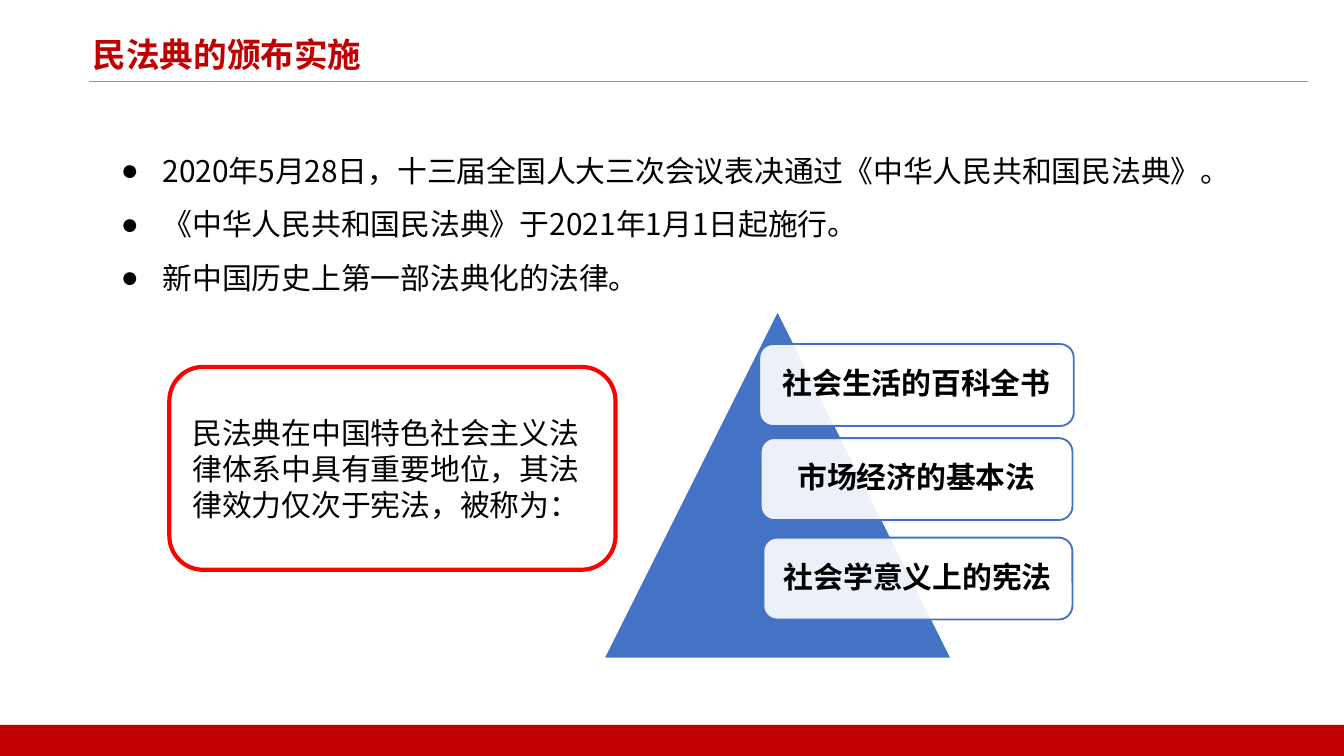
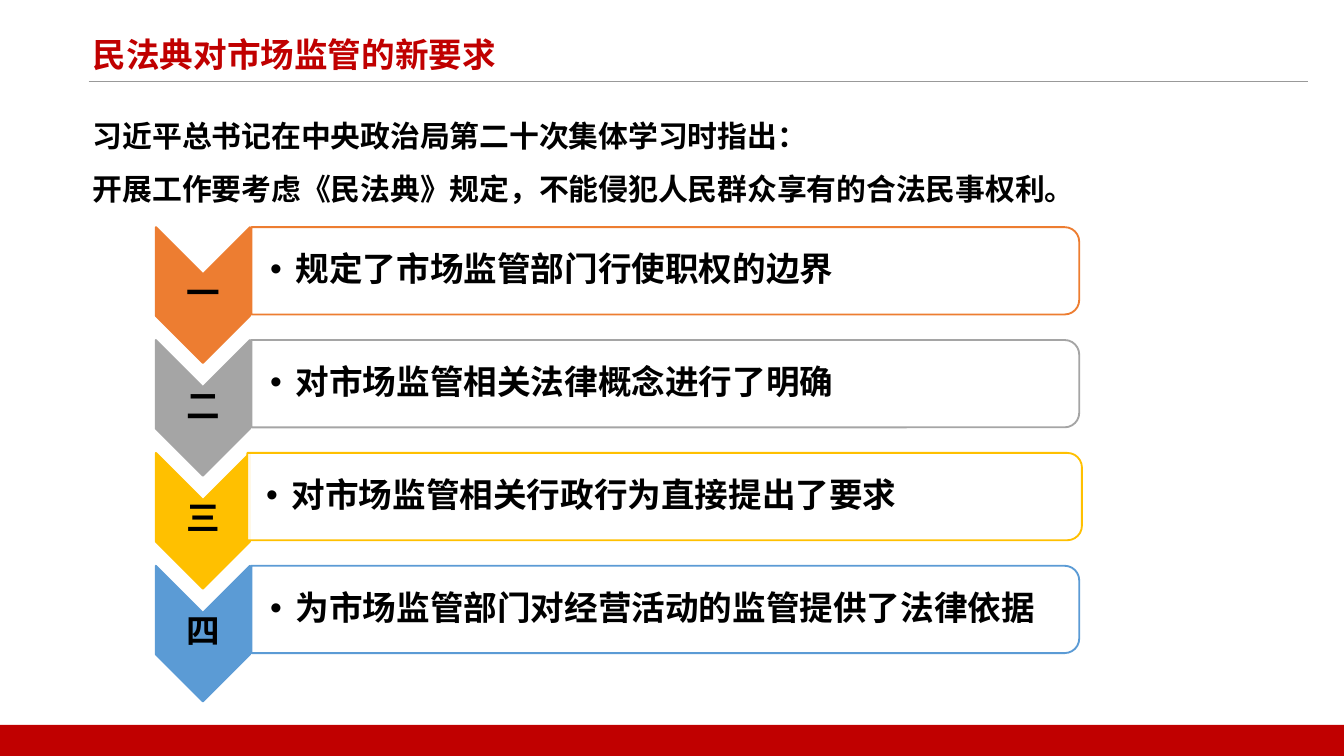
from dataclasses import dataclass

from lxml import etree
from pptx import Presentation
from pptx import util as u
from pptx.dml.color import RGBColor
from pptx.enum import shapes, text
from pptx.enum.lang import MSO_LANGUAGE_ID
from pptx.oxml.ns import qn

SHAPE = shapes.MSO_SHAPE
ALIGN = text.PP_ALIGN
ANCHOR = text.MSO_ANCHOR
PAGE_WIDTH = 10
PAGE_HEIGHT = PAGE_WIDTH * 9 / 16
BAND_HEIGHT = 0.23


@dataclass(frozen=True)
class Theme:
    font: str = "Noto Sans CJK SC"
    heading: int = 18
    body: int = 16
    ink: str = "000000"
    paper: str = "FFFFFF"
    brand: str = "C00000"
    alert: str = "FF0000"
    rule: str = "999999"
    blue: str = "4472C4"
    steps: tuple = ("ED7D31", "A5A5A5", "FFC000", "5B9BD5")


THEME = Theme()


def put_text(frame, lines, size=THEME.body, color=THEME.ink, bold=False,
             align=ALIGN.LEFT, anchor=ANCHOR.TOP, spacing=1.0,
             bullet=None, indent=0, insets=(0.1, 0.05, 0.1, 0.05)):
    """Fill a text frame, one paragraph a line; insets run left, top, right, bottom."""
    frame.word_wrap = True
    frame.auto_size = text.MSO_AUTO_SIZE.NONE
    frame.vertical_anchor = anchor
    (frame.margin_left, frame.margin_top,
     frame.margin_right, frame.margin_bottom) = map(u.Inches, insets)
    for number, line in enumerate(lines):
        paragraph = frame.add_paragraph() if number else frame.paragraphs[0]
        paragraph.alignment = align
        paragraph.line_spacing = spacing
        paragraph.space_before = u.Pt(0)
        props = paragraph._p.get_or_add_pPr()
        props.set("marL", str(u.Inches(indent)))
        props.set("indent", str(-u.Inches(indent)))
        if bullet:
            etree.SubElement(props, qn("a:buFont"), typeface="Arial")
            etree.SubElement(props, qn("a:buChar"), char=bullet)
        else:
            etree.SubElement(props, qn("a:buNone"))
        run = paragraph.add_run()
        run.text = line
        run.font.size = u.Pt(size)
        run.font.bold = bold
        run.font.color.rgb = RGBColor.from_string(color)
        run.font.name = THEME.font
        run.font.language_id = MSO_LANGUAGE_ID.SIMPLIFIED_CHINESE
        etree.SubElement(run._r.get_or_add_rPr(), qn("a:ea"), typeface=THEME.font)


class Deck:
    def __init__(self, theme):
        self.theme = theme
        self.prs = Presentation()
        self.prs.slide_width = u.Inches(PAGE_WIDTH)
        self.prs.slide_height = u.Inches(PAGE_HEIGHT)
        self.slide = None

    def new_slide(self, title):
        """Start a slide with its title, rule and bottom band."""
        self.slide = self.prs.slides.add_slide(self.prs.slide_layouts[1])
        self.placeholder(0, (0.59, 0.2, 9.09, 0.35), [title], size=self.theme.heading,
                         color=self.theme.brand, bold=True)
        self.rule(0.66, 9.73, 0.61)
        self.shape(SHAPE.RECTANGLE,
                   (0, PAGE_HEIGHT - BAND_HEIGHT, PAGE_WIDTH, BAND_HEIGHT),
                   fill=self.theme.brand)

    def placeholder(self, index, box, lines, **style):
        holder = self.slide.placeholders[index]
        holder.left, holder.top, holder.width, holder.height = map(u.Inches, box)
        put_text(holder.text_frame, lines, **style)

    def rule(self, left, right, y):
        line = self.slide.shapes.add_connector(
            shapes.MSO_CONNECTOR.STRAIGHT, *map(u.Inches, (left, y, right, y)))
        line.line.color.rgb = RGBColor.from_string(self.theme.rule)
        line.line.width = u.Pt(0.5)
        etree.SubElement(line._element.spPr, qn("a:effectLst"))

    def shape(self, kind, box, fill=None, opacity=100, line=None, weight=1, turned=False):
        """Add a shape that covers box, even when turned by 90 degrees."""
        left, top, width, height = box
        if turned:
            left, top = left + (width - height) / 2, top + (height - width) / 2
            width, height = height, width
        shape = self.slide.shapes.add_shape(
            kind, *map(u.Inches, (left, top, width, height)))
        shape.rotation = 90 if turned else 0
        shape.shadow.inherit = False
        if fill:
            shape.fill.solid()
            shape.fill.fore_color.rgb = RGBColor.from_string(fill)
            if opacity < 100:
                color = shape.fill._xPr.find(".//" + qn("a:srgbClr"))
                etree.SubElement(color, qn("a:alpha"), val=str(opacity * 1000))
        else:
            shape.fill.background()
        if line:
            shape.line.color.rgb = RGBColor.from_string(line)
            shape.line.width = u.Pt(weight)
        else:
            shape.line.fill.background()
        return shape

    def label(self, box, line, **style):
        frame = self.slide.shapes.add_textbox(*map(u.Inches, box)).text_frame
        put_text(frame, [line], bold=True, anchor=ANCHOR.MIDDLE, spacing=0.9, **style)

    def card(self, box, line):
        """Add a rounded card with its caption set just inside the outline."""
        left, top, width, height = box
        self.shape(SHAPE.ROUNDED_RECTANGLE, box, fill=self.theme.paper,
                   opacity=90, line=self.theme.blue)
        self.label((left + 0.03, top + 0.03, width - 0.06, height - 0.06), line,
                   align=ALIGN.CENTER, insets=(0.07,) * 4)

    def step(self, top, numeral, line, color, left, width):
        """Add a downward chevron with its numeral and the bar beside it."""
        self.shape(SHAPE.CHEVRON, (1.16, top, 0.7, 1.01), fill=color, line=color,
                   turned=True)
        self.label((1.16, top + 0.35, 0.7, 0.3), numeral, size=self.theme.heading,
                   align=ALIGN.CENTER, insets=(0.01,) * 4)
        self.shape(SHAPE.ROUND_2_SAME_RECTANGLE, (left, top, width, 0.65),
                   fill=self.theme.paper, opacity=90, line=color, turned=True)
        self.label((left, top + 0.03, width - 0.03, 0.59), line,
                   size=self.theme.heading, bullet="•", indent=0.19,
                   insets=(0.14, 0.01, 0.01, 0.01))


def build_enactment(deck):
    deck.new_slide("民法典的颁布实施")
    deck.placeholder(1, (0.8, 0.95, 8.4, 1.27), [
        "2020年5月28日，十三届全国人大三次会议表决通过《中华人民共和国民法典》。",
        "《中华人民共和国民法典》于2021年1月1日起施行。",
        "新中国历史上第一部法典化的法律。",
    ], spacing=1.5, bullet="●", indent=0.31)
    status = deck.shape(SHAPE.ROUNDED_RECTANGLE, (1.26, 2.73, 3.32, 1.51),
                        line=deck.theme.alert, weight=2.25)
    put_text(status.text_frame,
             ["民法典在中国特色社会主义法律体系中具有重要地位，其法律效力仅次于宪法，被称为："],
             anchor=ANCHOR.MIDDLE)
    deck.shape(SHAPE.ISOSCELES_TRIANGLE, (4.49, 2.31, 2.59, 2.59),
               fill=deck.theme.blue, line=deck.theme.paper)
    for left, top, width, role in (
        (5.65, 2.56, 2.34, "社会生活的百科全书"),
        (5.66, 3.26, 2.32, "市场经济的基本法"),
        (5.68, 4.0, 2.3, "社会学意义上的宪法"),
    ):
        deck.card((left, top, width, 0.61), role)


def build_requirements(deck):
    deck.new_slide("民法典对市场监管的新要求")
    deck.placeholder(1, (0.59, 0.69, 8.57, 0.87), [
        "习近平总书记在中央政治局第二十次集体学习时指出：",
        "开展工作要考虑《民法典》规定，不能侵犯人民群众享有的合法民事权利。",
    ], bold=True, spacing=1.5)
    requirements = (
        ("一", "规定了市场监管部门行使职权的边界", 1.87, 6.16),
        ("二", "对市场监管相关法律概念进行了明确", 1.87, 6.16),
        ("三", "对市场监管相关行政行为直接提出了要求", 1.84, 6.21),
        ("四", "为市场监管部门对经营活动的监管提供了法律依据", 1.87, 6.16),
    )
    for row, (numeral, line, left, width) in enumerate(requirements):
        deck.step(1.69 + 0.84 * row, numeral, line, deck.theme.steps[row], left, width)


def main():
    deck = Deck(THEME)
    build_enactment(deck)
    build_requirements(deck)
    deck.prs.save("out.pptx")


if __name__ == "__main__":
    main()
